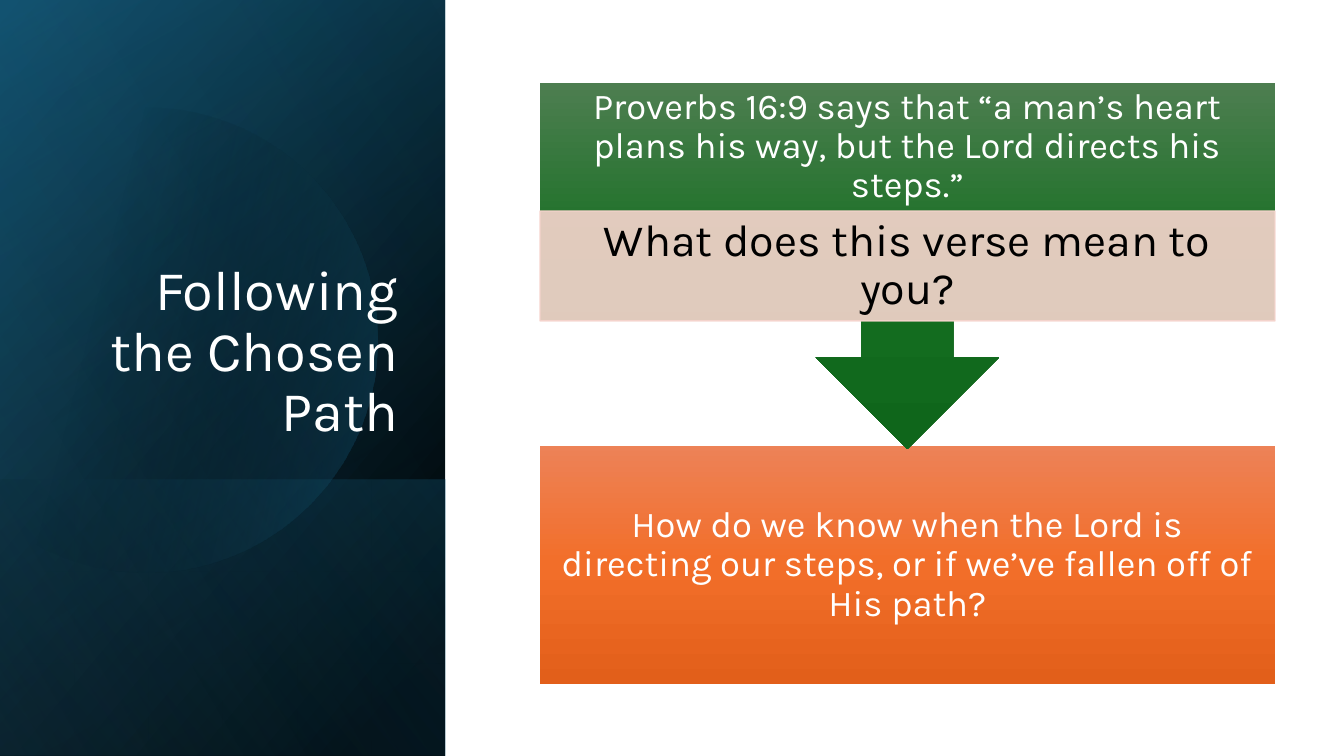
"""Build the "Following the Chosen Path" slide."""
import math
from dataclasses import dataclass

import lxml.etree
import pptx
import pptx.dml.color
import pptx.enum.shapes
import pptx.enum.text
import pptx.oxml.ns
import pptx.util

EMU_PER_PX = 914400 / 100.8
PANEL_WIDTH, PAGE_WIDTH, PAGE_HEIGHT = 445, 1344, 756
CARD_LEFT, CARD_WIDTH = 540, 735
Shapes = pptx.enum.shapes.MSO_SHAPE
Anchor = pptx.enum.text.MSO_ANCHOR
Align = pptx.enum.text.PP_ALIGN
qn = pptx.oxml.ns.qn


@dataclass(frozen=True)
class Stop:
    position: int
    color: str
    alpha: int = 100


@dataclass(frozen=True)
class Gradient:
    angle: int
    stops: tuple[Stop, ...]


@dataclass(frozen=True)
class Layer:
    top: int
    height: int
    gradient: Gradient


@dataclass(frozen=True)
class Label:
    text: str
    size: int
    color: str = "FFFFFF"
    align: Align = Align.CENTER
    anchor: Anchor = Anchor.MIDDLE
    insets: tuple[int, int, int, int] = (20, 0, 20, 0)


@dataclass(frozen=True)
class Card:
    kind: Shapes
    top: int
    height: int
    fill: Gradient | str
    label: Label


BACK_LAYERS = (
    Layer(0, PAGE_HEIGHT, Gradient(50, (Stop(8, "000000"), Stop(100, "104862")))),
    Layer(0, PAGE_HEIGHT, Gradient(30, (Stop(0, "000000", 0), Stop(99, "156082", 46)))),
    Layer(480, 276, Gradient(130, (Stop(2, "156082", 29), Stop(100, "000000", 30)))),
)
FRONT_LAYER = Layer(0, PAGE_HEIGHT, Gradient(120, (Stop(0, "000000", 0), Stop(99, "46B1E1", 11))))
CIRCLE_GRADIENT = Gradient(14, (Stop(29, "000000", 0), Stop(100, "156082", 43)))
TITLE = Label("Following the Chosen Path", 40, align=Align.RIGHT,
              anchor=Anchor.BOTTOM, insets=(10, 5, 10, 5))
CARDS = (
    Card(Shapes.RECTANGLE, 446, 238,
         Gradient(90, (Stop(0, "ED8257"), Stop(50, "F26E29"), Stop(100, "E25F1A"))),
         Label("How do we know when the Lord is directing our steps, "
               "or if we’ve fallen off of His path?", 26)),
    Card(Shapes.DOWN_ARROW_CALLOUT, 83, 366,
         Gradient(90, (Stop(0, "4D7E50"), Stop(50, "156F21"), Stop(100, "0F661B"))),
         Label("Proverbs 16:9 says that “a man’s heart plans his way, "
               "but the Lord directs his steps.”", 26, insets=(20, 0, 20, 110))),
    Card(Shapes.RECTANGLE, 211, 110, "F7D5CE",
         Label("What does this verse mean to you?", 32, "000000", insets=(25, 4, 25, 4))),
)


def px(length: float) -> int:
    """Turn pixels into EMU."""
    return round(length * EMU_PER_PX)


def rgb(color: str) -> pptx.dml.color.RGBColor:
    """Turn a hex string into a colour."""
    return pptx.dml.color.RGBColor.from_string(color)


def set_alpha(color_element, alpha: int) -> None:
    """Give a colour element an opacity in percent."""
    lxml.etree.SubElement(color_element, qn("a:alpha")).set("val", str(alpha * 1000))


def paint_gradient(shape, gradient: Gradient) -> None:
    """Fill a shape with a linear gradient and remove its line and shadow."""
    shape.shadow.inherit = False
    shape.line.fill.background()
    shape.fill.gradient()
    shape.fill.gradient_angle = 360 - gradient.angle
    stop_list = shape.element.spPr.find(qn("a:gradFill")).find(qn("a:gsLst"))
    for old_stop in list(stop_list):
        stop_list.remove(old_stop)
    for stop in gradient.stops:
        entry = lxml.etree.SubElement(stop_list, qn("a:gs"))
        entry.set("pos", str(stop.position * 1000))
        color = lxml.etree.SubElement(entry, qn("a:srgbClr"))
        color.set("val", stop.color)
        if stop.alpha < 100:
            set_alpha(color, stop.alpha)


def paint_tint(shape, color: str) -> None:
    """Give a shape a slightly transparent fill and a matching line."""
    shape.shadow.inherit = False
    shape.line.width = pptx.util.Pt(1)
    for fill in (shape.fill, shape.line.fill):
        fill.solid()
        fill.fore_color.rgb = rgb(color)
    for color_element in shape.element.spPr.iter(qn("a:srgbClr")):
        set_alpha(color_element, 90)


def write_label(shape, label: Label) -> None:
    """Write and format the text of a shape."""
    frame = shape.text_frame
    frame.text = label.text
    frame.word_wrap = True
    frame.vertical_anchor = label.anchor
    (frame.margin_left, frame.margin_top,
     frame.margin_right, frame.margin_bottom) = map(px, label.insets)
    para = frame.paragraphs[0]
    para.alignment = label.align
    para.line_spacing = 0.9
    span = para.runs[0]
    span.font.name = "Karla"
    span.font.size = pptx.util.Pt(label.size)
    span.font.color.rgb = rgb(label.color)


def draw_layer(page, layer: Layer) -> None:
    """Draw a mirrored quarter-turned rectangle across the left panel."""
    shift = (PANEL_WIDTH - layer.height) / 2
    box = page.shapes.add_shape(Shapes.RECTANGLE, px(shift), px(layer.top - shift),
                                px(layer.height), px(PANEL_WIDTH))
    box.rotation = 90
    box.element.spPr.find(qn("a:xfrm")).set("flipH", "1")
    paint_gradient(box, layer.gradient)


def draw_circle(page) -> None:
    """Draw the circle that the left edge of the page cuts off."""
    center_x, center_y, radius, steps = 146, 340, 232, 120
    reach = math.acos(-center_x / radius)
    angles = [reach * (2 * step / steps - 1) for step in range(steps + 1)]
    points = [(px(center_x + radius * math.cos(angle)),
               px(center_y + radius * math.sin(angle))) for angle in angles]
    builder = page.shapes.build_freeform(*points[0])
    builder.add_line_segments(points[1:], close=True)
    paint_gradient(builder.convert_to_shape(), CIRCLE_GRADIENT)


def draw_card(page, card: Card) -> None:
    """Draw one block of the right-hand flow."""
    box = page.shapes.add_shape(card.kind, px(CARD_LEFT), px(card.top),
                                px(CARD_WIDTH), px(card.height))
    if isinstance(card.fill, Gradient):
        paint_gradient(box, card.fill)
    else:
        paint_tint(box, card.fill)
    write_label(box, card.label)


def main() -> None:
    """Build and save the deck."""
    deck = pptx.Presentation()
    deck.slide_width, deck.slide_height = px(PAGE_WIDTH), px(PAGE_HEIGHT)
    page = deck.slides.add_slide(deck.slide_layouts[6])
    for layer in BACK_LAYERS:
        draw_layer(page, layer)
    draw_circle(page)
    draw_layer(page, FRONT_LAYER)
    write_label(page.shapes.add_textbox(px(64), px(185), px(344), px(264)), TITLE)
    for card in CARDS:
        draw_card(page, card)
    deck.save("out.pptx")


if __name__ == "__main__":
    main()
